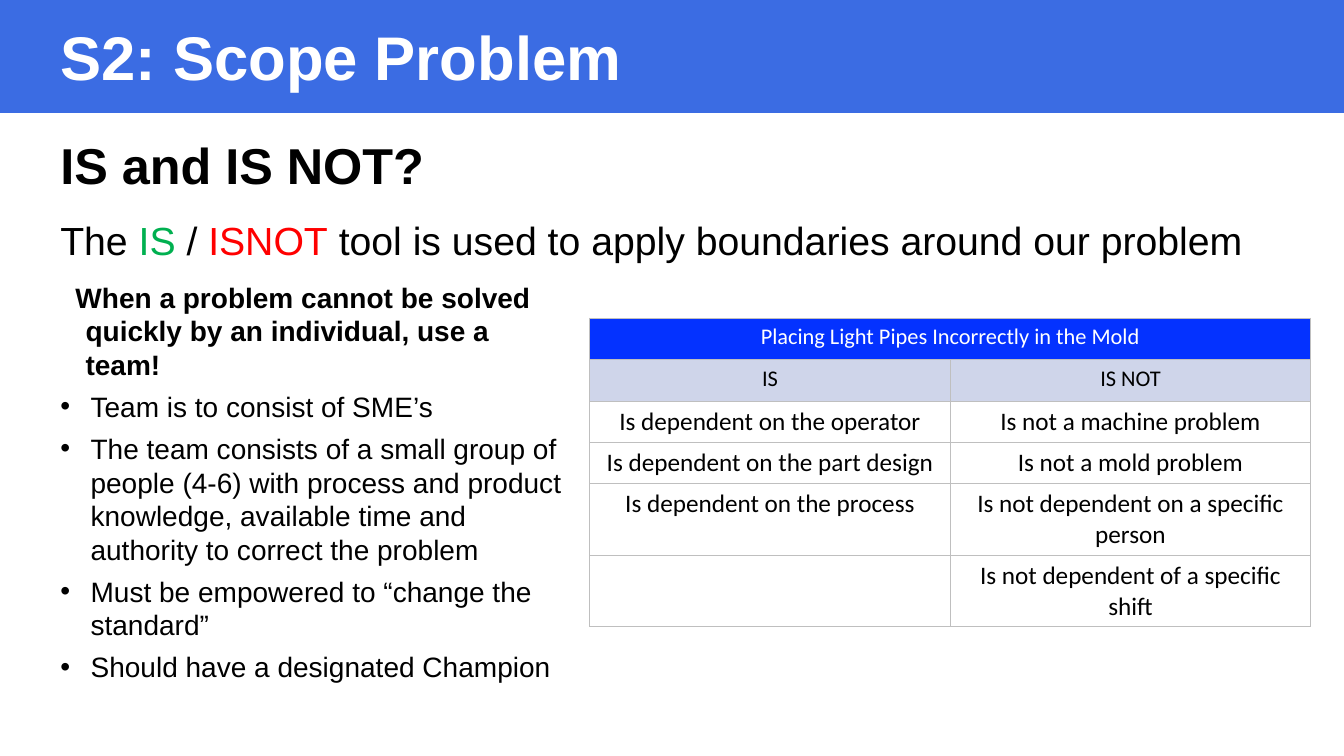
from lxml.etree import SubElement
from pptx import Presentation
from pptx.dml.color import RGBColor
from pptx.enum.shapes import MSO_SHAPE
from pptx.enum.text import MSO_ANCHOR as ANCHOR, PP_ALIGN as ALIGN
from pptx.oxml.ns import qn
from pptx.util import Inches, Pt

BLACK = RGBColor(0x00, 0x00, 0x00)
WHITE = RGBColor(0xFF, 0xFF, 0xFF)
BANNER = RGBColor(0x3B, 0x6C, 0xE3)
GREEN = RGBColor(0x00, 0xB0, 0x50)
RED = RGBColor(0xFF, 0x00, 0x00)
TABLE_HEAD = RGBColor(0x04, 0x32, 0xFF)
TABLE_SUBHEAD = RGBColor(0xCF, 0xD5, 0xEA)
BORDER = RGBColor(0xBF, 0xBF, 0xBF)

TITLE = [("S2: Scope Problem", WHITE)]
SUBTITLE = [("IS and IS NOT?", BLACK)]
PURPOSE = [
    ("The ", BLACK),
    ("IS", GREEN),
    (" / ", BLACK),
    ("ISNOT", RED),
    (" tool is used to apply boundaries around our problem", BLACK),
]
LEAD = "When a problem cannot be solved quickly by an individual, use a team!"
BULLETS = [
    "Team is to consist of SME’s",
    "The team consists of a small group of people (4-6) with process and product "
    "knowledge, available time and authority to correct the problem",
    "Must be empowered to “change the standard”",
    "Should have a designated Champion",
]
SCOPE_ROWS = [
    ("Placing Light Pipes Incorrectly in the Mold", ""),
    ("IS", "IS NOT"),
    ("Is dependent on the operator", "Is not a machine problem"),
    ("Is dependent on the part design", "Is not a mold problem"),
    ("Is dependent on the process", "Is not dependent on a specific person"),
    ("", "Is not dependent of a specific shift"),
]
HEAD_STYLES = [(16, WHITE, TABLE_HEAD), (16, BLACK, TABLE_SUBHEAD)]
CELL_STYLE = (18, BLACK, WHITE)
ROW_HEIGHTS = [0.41] * 4 + [0.71] * 2


def style_font(font, name, size, color, bold=False):
    font.name, font.size, font.bold = name, Pt(size), bold
    font.color.rgb = color


def add_text_box(slide, left, top, width, height, anchor):
    box = slide.shapes.add_textbox(Inches(left), Inches(top), Inches(width), Inches(height))
    tf = box.text_frame
    tf.word_wrap = True
    tf.vertical_anchor = anchor
    return tf


def add_heading(slide, runs, top, width, height, size, bold, align=ALIGN.LEFT):
    p = add_text_box(slide, 0.5, top, width, height, ANCHOR.MIDDLE).paragraphs[0]
    p.alignment = align
    p.line_spacing = 0.9
    for text, color in runs:
        r = p.add_run()
        r.text = text
        style_font(r.font, "Arial", size, color, bold)


def add_team_notes(slide):
    tf = add_text_box(slide, 0.5, 2.73, 5.22, 4.57, ANCHOR.TOP)
    for i, text in enumerate([LEAD] + BULLETS):
        is_lead = i == 0
        p = tf.paragraphs[0] if is_lead else tf.add_paragraph()
        p.text = text
        p.line_spacing = Pt(24)
        p.space_after = Pt(6)
        margin, indent = (0.25, -0.1) if is_lead else (0.3, -0.3)
        pPr = p._p.get_or_add_pPr()
        pPr.set("marL", str(Inches(margin)))
        pPr.set("indent", str(Inches(indent)))
        if not is_lead:
            p.level = 1
            SubElement(pPr, qn("a:buFont"), typeface="Arial")
            SubElement(pPr, qn("a:buChar"), char="•")
        style_font(p.runs[0].font, "Arial", 20, BLACK, is_lead)


def add_borders(cell):
    tcPr = cell._tc.get_or_add_tcPr()
    for i, side in enumerate(("a:lnL", "a:lnR", "a:lnT", "a:lnB")):
        ln = tcPr.makeelement(qn(side), {"w": str(Pt(1))})
        fill = SubElement(ln, qn("a:solidFill"))
        SubElement(fill, qn("a:srgbClr"), val=str(BORDER))
        tcPr.insert(i, ln)


def add_scope_table(slide):
    frame = slide.shapes.add_table(len(SCOPE_ROWS), 2, Inches(5.85), Inches(3.16),
                                   Inches(7.15), Inches(sum(ROW_HEIGHTS)))
    table = frame.table
    for row, height in zip(table.rows, ROW_HEIGHTS):
        row.height = Inches(height)
    table.cell(0, 0).merge(table.cell(0, 1))
    for i, texts in enumerate(SCOPE_ROWS):
        size, color, fill = HEAD_STYLES[i] if i < len(HEAD_STYLES) else CELL_STYLE
        for j, text in enumerate(texts):
            cell = table.cell(i, j)
            cell.fill.solid()
            cell.fill.fore_color.rgb = fill
            add_borders(cell)
            if text:
                p = cell.text_frame.paragraphs[0]
                p.text = text
                p.alignment = ALIGN.CENTER
                style_font(p.runs[0].font, "Calibri", size, color)


def main():
    prs = Presentation()
    prs.slide_width, prs.slide_height = Inches(13.33), Inches(7.5)
    slide = prs.slides.add_slide(prs.slide_layouts[6])

    banner = slide.shapes.add_shape(MSO_SHAPE.RECTANGLE, 0, 0, prs.slide_width, Inches(1.12))
    banner.shadow.inherit = False
    banner.fill.solid()
    banner.fill.fore_color.rgb = BANNER
    banner.line.fill.background()

    add_team_notes(slide)
    add_heading(slide, TITLE, 0.2, 8.81, 0.8, 44, True)
    add_heading(slide, SUBTITLE, 1.32, 9, 0.7, 36, True)
    add_heading(slide, PURPOSE, 2.12, 12.5, 0.57, 28, False, ALIGN.JUSTIFY)
    add_scope_table(slide)
    prs.save("out.pptx")


if __name__ == "__main__":
    main()
